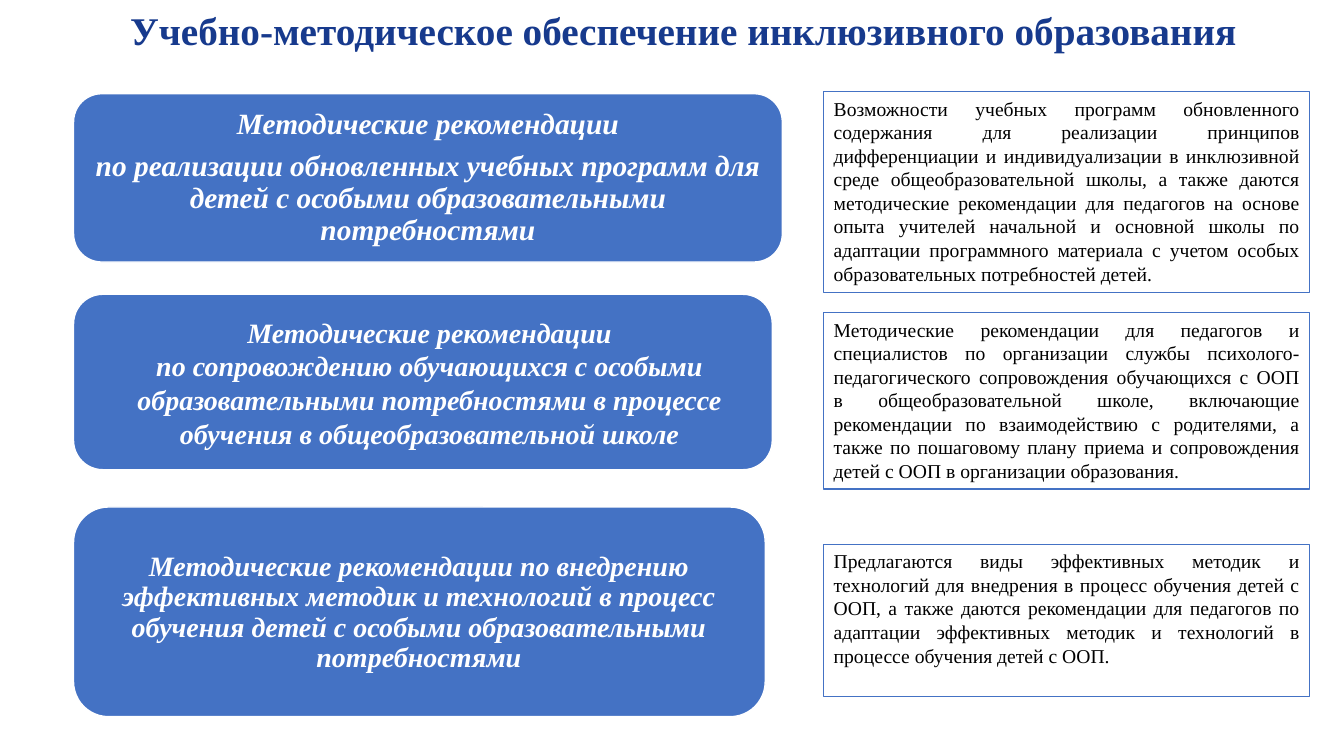
from pptx import Presentation
from pptx.dml.color import RGBColor
from pptx.enum.shapes import MSO_SHAPE
from pptx.enum.text import MSO_ANCHOR, PP_ALIGN
from pptx.util import Inches, Pt

BLUE = RGBColor(0x44, 0x72, 0xC4)
NAVY = RGBColor(0x17, 0x3A, 0x8D)
WHITE = RGBColor(0xFF, 0xFF, 0xFF)
BLACK = RGBColor(0x00, 0x00, 0x00)
FONT = "Times New Roman"

# Each guide: box, label inset (x, y), text margin, size, line spacing, space after, paragraphs
GUIDES = [
    ((0.73, 0.93, 7.03, 1.67), (0.08, 0.08, 0.08, 0.08), 0.09, 21, 0.9, 7.35, [
        "Методические рекомендации",
        "по реализации обновленных учебных программ для детей с особыми "
        "образовательными потребностями"]),
    ((0.73, 2.92, 6.93, 1.74), (0.14, 0.09, 0.01, 0.08), 0.07, 20, 1.0, 0, [
        "Методические рекомендации",
        "по сопровождению обучающихся с особыми образовательными потребностями "
        "в процессе обучения в общеобразовательной школе"]),
    ((0.73, 5.03, 6.86, 2.08), (0.1, 0.11, 0.11, 0.09), 0.08, 20, 0.9, 0, [
        "Методические рекомендации по внедрению эффективных методик и технологий "
        "в процесс обучения детей с особыми образовательными потребностями"]),
]

# Each summary: top, height, text
SUMMARIES = [
    (0.91, 1.99,
     "Возможности учебных программ обновленного содержания для реализации принципов "
     "дифференциации и индивидуализации в инклюзивной среде общеобразовательной школы, "
     "а также даются методические рекомендации для педагогов на основе опыта учителей "
     "начальной и основной школы по адаптации программного материала с учетом особых "
     "образовательных потребностей детей."),
    (3.1, 1.75,
     "Методические рекомендации для педагогов и специалистов по организации службы "
     "психолого-педагогического сопровождения обучающихся с ООП в общеобразовательной "
     "школе, включающие рекомендации по взаимодействию с родителями, а также по "
     "пошаговому плану приема и сопровождения детей с ООП в организации образования."),
    (5.4, 1.51,
     "Предлагаются виды эффективных методик и технологий для внедрения в процесс "
     "обучения детей с ООП, а также даются рекомендации для педагогов по адаптации "
     "эффективных методик и технологий в процессе обучения детей с ООП."),
]


def add_panel(page, kind, box, fill, outline):
    panel = page.shapes.add_shape(kind, *map(Inches, box))
    panel.shadow.inherit = False
    panel.fill.solid()
    panel.fill.fore_color.rgb = fill
    panel.line.color.rgb = outline
    panel.line.width = Pt(1)
    return panel


def write(frame, texts, size, color, align, anchor, bold=False, italic=False,
          spacing=1.0, after=0):
    frame.word_wrap = True
    frame.vertical_anchor = anchor
    for index, text in enumerate(texts):
        para = frame.add_paragraph() if index else frame.paragraphs[0]
        para.text = text
        para.alignment = align
        para.line_spacing = spacing
        para.space_after = Pt(after)
        para.font.name = FONT
        para.font.size = Pt(size)
        para.font.bold = bold
        para.font.italic = italic
        para.font.color.rgb = color


def add_title(page, box):
    title = page.shapes.add_textbox(*map(Inches, box))
    write(title.text_frame, ["Учебно-методическое обеспечение инклюзивного образования "],
          28, NAVY, PP_ALIGN.CENTER, MSO_ANCHOR.MIDDLE, bold=True)


def add_guide(page, box, inset, margin, size, spacing, after, texts):
    add_panel(page, MSO_SHAPE.ROUNDED_RECTANGLE, box, BLUE, WHITE)
    left, top, width, height = box
    inset_left, inset_top, inset_right, inset_bottom = inset
    label = page.shapes.add_textbox(
        Inches(left + inset_left), Inches(top + inset_top),
        Inches(width - inset_left - inset_right),
        Inches(height - inset_top - inset_bottom))
    frame = label.text_frame
    frame.margin_left = frame.margin_right = Inches(margin)
    frame.margin_top = frame.margin_bottom = Inches(margin)
    write(frame, texts, size, WHITE, PP_ALIGN.CENTER, MSO_ANCHOR.MIDDLE,
          bold=True, italic=True, spacing=spacing, after=after)


def add_summary(page, box, text):
    panel = add_panel(page, MSO_SHAPE.RECTANGLE, box, WHITE, BLUE)
    write(panel.text_frame, [text], 14, BLACK, PP_ALIGN.JUSTIFY, MSO_ANCHOR.TOP)


def main():
    deck = Presentation()
    deck.slide_width = Inches(13.33)
    deck.slide_height = Inches(7.5)
    page = deck.slides.add_slide(deck.slide_layouts[6])

    add_title(page, (0.73, 0, 12.19, 0.59))
    # Left column: guides
    for guide in GUIDES:
        add_guide(page, *guide)
    # Right column: what each guide covers
    for top, height, text in SUMMARIES:
        add_summary(page, (8.17, top, 4.82, height), text)

    deck.save("out.pptx")


if __name__ == "__main__":
    main()
